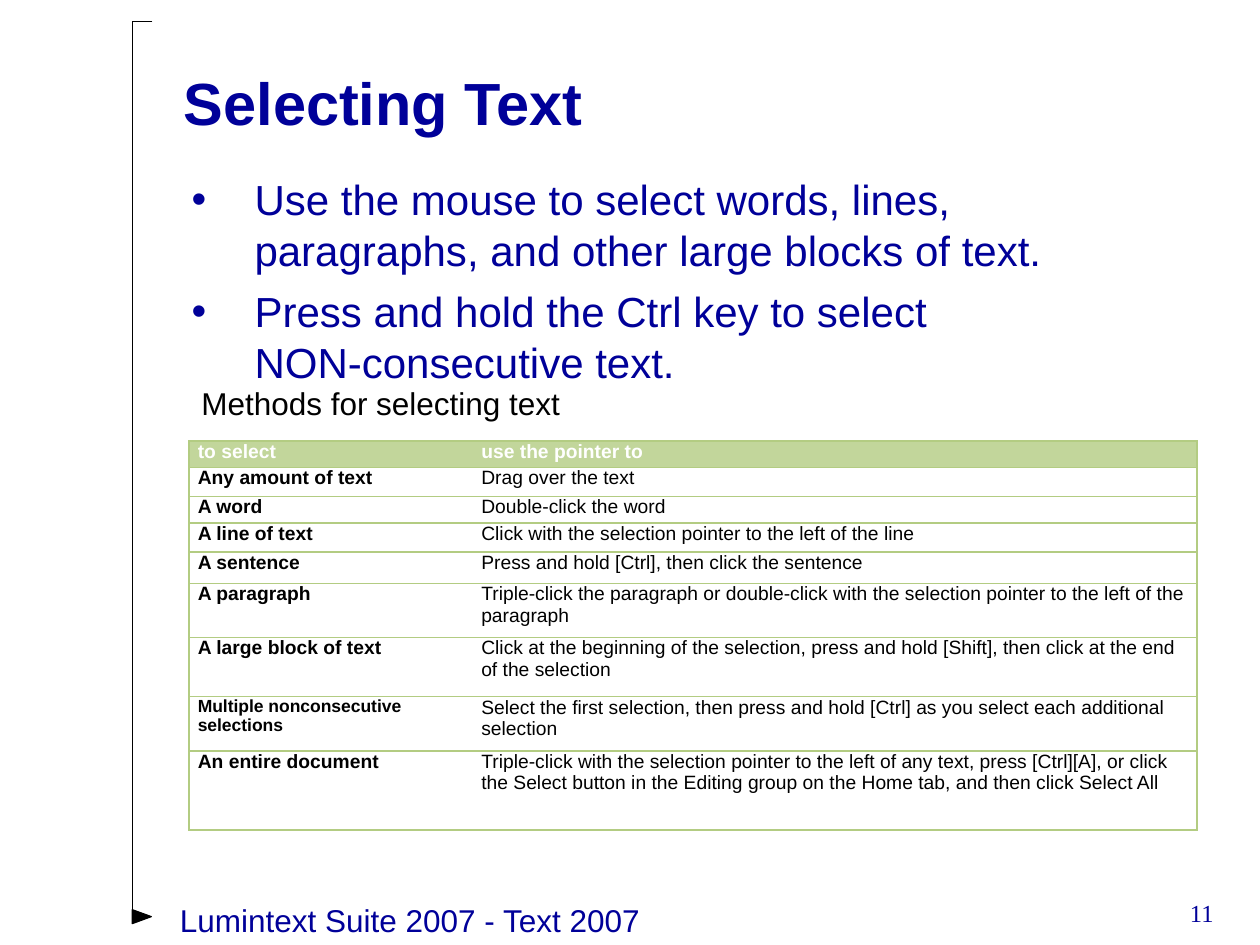
import pptx
import pptx.util
import pptx.dml.color
import pptx.enum.shapes
import pptx.enum.text
import pptx.oxml.ns
import lxml.etree

Inches, Pt = pptx.util.Inches, pptx.util.Pt
ANCHOR, ALIGN = pptx.enum.text.MSO_ANCHOR, pptx.enum.text.PP_ALIGN
FIT = pptx.enum.text.MSO_AUTO_SIZE
NAVY, GREEN, BLACK = "000099", "B3CC82", "000000"


def colour(hex_value):
    return pptx.dml.color.RGBColor.from_string(hex_value)


def write(frame, lines, hex_value, **font_values):
    """Put one paragraph per line into the frame and format every run."""
    for index, line in enumerate(lines):
        para = frame.paragraphs[0] if index == 0 else frame.add_paragraph()
        para.text = line
        for span in para.runs:
            span.font.color.rgb = colour(hex_value)
            for name, value in {"name": "Arial", **font_values}.items():
                setattr(span.font, name, value)


deck = pptx.Presentation()
deck.slide_width, deck.slide_height = Inches(10), Inches(7.5)
page = deck.slides.add_slide(deck.slide_layouts[1])

# Margin bracket with its arrowhead
builder = page.shapes.build_freeform(Inches(1.21), Inches(0.17))
builder.add_line_segments(
    [(Inches(1.05), Inches(0.17)), (Inches(1.05), Inches(7.33))], close=False)
bracket = builder.convert_to_shape()
bracket.fill.background()
arrow = page.shapes.add_shape(
    pptx.enum.shapes.MSO_SHAPE.ISOSCELES_TRIANGLE,
    Inches(1.07), Inches(7.2), Inches(0.11), Inches(0.15))
arrow.rotation = 90
arrow.fill.solid()
arrow.fill.fore_color.rgb = colour(BLACK)
for shape in (bracket, arrow):
    shape.shadow.inherit = False
    shape.line.color.rgb = colour(BLACK)
    shape.line.width = Pt(0.75)

# Title, list, caption, footer and page number
title, body = page.shapes.title, page.placeholders[1]
caption, footer, number = [page.shapes.add_textbox(0, 0, 0, 0) for _ in range(3)]
texts = [
    (title, (1.36, 0.39, 7.58, 0.83), ["Selecting Text"], NAVY,
     {"size": Pt(34), "bold": True}),
    (body, (1.42, 1.33, 7.82, 1.65),
     ["Use the mouse to select words, lines, paragraphs, and other large blocks of text.",
      "Press and hold the Ctrl key to select \nNON-consecutive text."], NAVY,
     {"size": Pt(24)}),
    (caption, (1.5, 3, 4.27, 0.5), ["Methods for selecting text"], BLACK,
     {"size": Pt(18)}),
    (footer, (1.33, 7.1, 4.03, 0.4), ["Lumintext Suite 2007 - Text 2007"], NAVY,
     {"size": Pt(18)}),
    (number, (9.05, 7.08, 0.68, 0.28), ["11"], NAVY,
     {"size": Pt(14), "name": "Times New Roman"}),
]
for box, place, lines, hex_value, font_values in texts:
    for name, value in zip(("left", "top", "width", "height"), place):
        setattr(box, name, Inches(value))
    box.text_frame.word_wrap = box is not footer
    box.text_frame.auto_size = FIT.NONE
    write(box.text_frame, lines, hex_value, **font_values)
title.text_frame.vertical_anchor = ANCHOR.MIDDLE
title.text_frame.paragraphs[0].alignment = ALIGN.LEFT
number.text_frame.paragraphs[0].alignment = ALIGN.RIGHT
for para in body.text_frame.paragraphs:
    properties = para._p.get_or_add_pPr()
    properties.set("marL", str(Inches(0.5)))
    properties.set("indent", str(-Inches(0.5)))

# Table of selection methods: row height, what to select, how
rows = [
    (0.21, "to select", "use the pointer to"),
    (0.23, "Any amount of text", "Drag over the text"),
    (0.21, "A word", "Double-click the word"),
    (0.23, "A line of text", "Click with the selection pointer to the left of the line"),
    (0.25, "A sentence", "Press and hold [Ctrl], then click the sentence"),
    (0.43, "A paragraph", "Triple-click the paragraph or double-click with the "
     "selection pointer to the left of the paragraph"),
    (0.47, "A large block of text", "Click at the beginning of the selection, press and "
     "hold [Shift], then click at the end of the selection"),
    (0.43, "Multiple nonconsecutive selections", "Select the first selection, then press "
     "and hold [Ctrl] as you select each additional selection"),
    (0.63, "An entire document", "Triple-click with the selection pointer to the left of "
     "any text, press [Ctrl][A], or click the Select button in the Editing group on the "
     "Home tab, and then click Select All"),
]
table = page.shapes.add_table(
    len(rows), 2, Inches(1.5), Inches(3.5), Inches(8),
    Inches(sum(row[0] for row in rows))).table
table.horz_banding = False
table.columns[0].width, table.columns[1].width = Inches(2.25), Inches(5.75)
cell_format = {"margin_left": Inches(0.07), "margin_right": Inches(0.07),
               "margin_top": 0, "margin_bottom": 0, "vertical_anchor": ANCHOR.TOP}
qn = pptx.oxml.ns.qn
for r, (height, *labels) in enumerate(rows):
    table.rows[r].height = Inches(height)
    for c, label in enumerate(labels):
        cell = table.cell(r, c)
        for name, value in cell_format.items():
            setattr(cell, name, value)
        size = 10 if label.startswith("Multiple") else 11
        write(cell.text_frame, [label], "FFFFFF" if r == 0 else BLACK,
              size=Pt(size), bold=r == 0 or c == 0)
        # Outer frame and row rules, with no rule between the columns
        for side in ("lnL", "lnR", "lnT", "lnB"):
            edge = lxml.etree.SubElement(
                cell._tc.get_or_add_tcPr(), qn("a:" + side), w=str(Pt(1)))
            if side == ("lnR", "lnL")[c]:
                lxml.etree.SubElement(edge, qn("a:noFill"))
            else:
                fill = lxml.etree.SubElement(edge, qn("a:solidFill"))
                lxml.etree.SubElement(fill, qn("a:srgbClr"), val=GREEN)
        if r == 0:
            cell.fill.solid()
            cell.fill.fore_color.rgb = colour("C2D69B")
        else:
            cell.fill.background()

deck.save("out.pptx")
